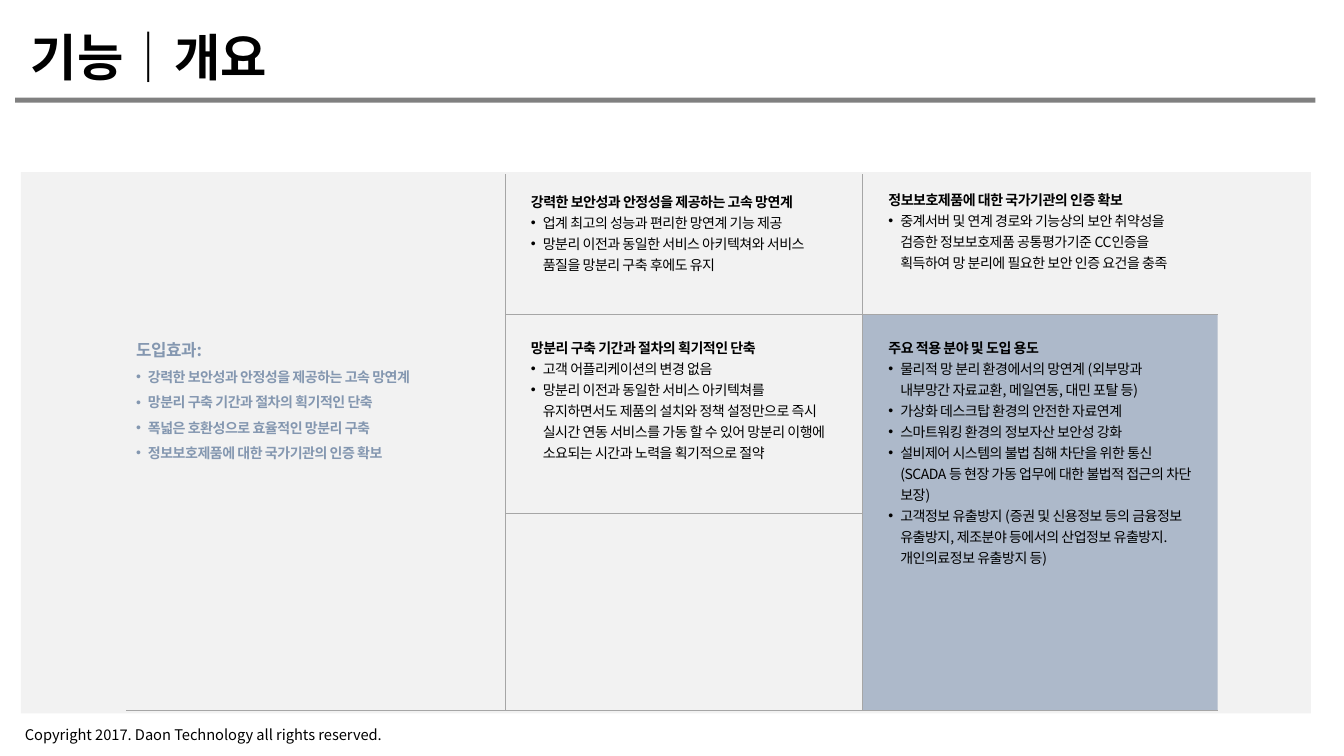
from dataclasses import dataclass

from lxml import etree
from pptx import Presentation
from pptx import util as u
from pptx.dml.color import RGBColor
from pptx.enum import shapes, text
from pptx.oxml.ns import qn

FONT = "Noto Sans CJK KR"
BLACK, SLATE, BLUE = "000000", "8497B0", "ADB9CA"
GREY, RULE, PANEL = "808080", "A6A6A6", "F2F2F2"

# Grid of the feature table, in centimetres
LEFT, MIDDLE, RIGHT, END = 3.18, 12.73, 21.74, 30.69
TOP, UPPER, LOWER, BOTTOM = 4.39, 7.92, 12.93, 17.91
CELL_PAD = 0.4
CELL_WIDTH = 8.2
BULLET_INDENT = 0.3


@dataclass
class Block:
    left: float
    top: float
    width: float
    height: float
    color: str


@dataclass
class Rule:
    x1: float
    y1: float
    x2: float
    y2: float


@dataclass
class Feature:
    left: float
    top: float
    width: float
    height: float
    heading: str
    bullets: list[str]
    heading_size: float = 10
    line_pitch: float = 15
    color: str = BLACK
    bold_bullets: bool = False


BLOCKS = [
    Block(0.38, 2.46, 32.77, 0.13, GREY),
    Block(0.53, 4.34, 32.51, 13.64, PANEL),
    Block(RIGHT, UPPER, END - RIGHT, BOTTOM - UPPER, BLUE),
]

RULES = [
    Rule(MIDDLE, TOP, MIDDLE, BOTTOM),
    Rule(RIGHT, TOP, RIGHT, BOTTOM),
    Rule(MIDDLE, UPPER, END, UPPER),
    Rule(MIDDLE, LOWER, RIGHT, LOWER),
    Rule(LEFT, BOTTOM, END, BOTTOM),
]

FEATURES = [
    Feature(LEFT, UPPER + CELL_PAD, 8.41, 5.38, "도입효과:", [
        "강력한 보안성과 안정성을 제공하는 고속 망연계",
        "망분리 구축 기간과 절차의 획기적인 단축",
        "폭넓은 호환성으로 효율적인 망분리 구축",
        "정보보호제품에 대한 국가기관의 인증 확보",
    ], heading_size=12, line_pitch=18, color=SLATE, bold_bullets=True),
    Feature(MIDDLE + CELL_PAD, 4.65, CELL_WIDTH, 2.39,
            "강력한 보안성과 안정성을 제공하는 고속 망연계", [
        "업계 최고의 성능과 편리한 망연계 기능 제공",
        "망분리 이전과 동일한 서비스 아키텍쳐와 서비스 품질을 망분리 구축 후에도 유지",
    ]),
    Feature(MIDDLE + CELL_PAD, UPPER + CELL_PAD, CELL_WIDTH, 3.99,
            "망분리 구축 기간과 절차의 획기적인 단축", [
        "고객 어플리케이션의 변경 없음",
        "망분리 이전과 동일한 서비스 아키텍쳐를 유지하면서도 제품의 설치와 정책 설정만으로 즉시 "
        "실시간 연동 서비스를 가동 할 수 있어 망분리 이행에 소요되는 시간과 노력을 획기적으로 절약",
    ]),
    Feature(RIGHT + CELL_PAD, 4.6, CELL_WIDTH, 2.92,
            "정보보호제품에 대한 국가기관의 인증 확보", [
        "중계서버 및 연계 경로와 기능상의 보안 취약성을 검증한 정보보호제품 공통평가기준 "
        "CC인증을 획득하여 망 분리에 필요한 보안 인증 요건을 충족",
    ]),
    Feature(RIGHT + CELL_PAD, UPPER + CELL_PAD, CELL_WIDTH, 6.15,
            "주요 적용 분야 및 도입 용도", [
        "물리적 망 분리 환경에서의 망연계 (외부망과 내부망간 자료교환, 메일연동, 대민 포탈 등)",
        "가상화 데스크탑 환경의 안전한 자료연계",
        "스마트워킹 환경의 정보자산 보안성 강화",
        "설비제어 시스템의 불법 침해 차단을 위한 통신 (SCADA 등 현장 가동 업무에 대한 불법적 접근의 차단 보장)",
        "고객정보 유출방지 (증권 및 신용정보 등의 금융정보 유출방지, 제조분야 등에서의 "
        "산업정보 유출방지. 개인의료정보 유출방지 등)",
    ]),
]


def rgb(color: str) -> RGBColor:
    return RGBColor.from_string(color)


def add_block(page, block: Block) -> None:
    shape = page.shapes.add_shape(
        shapes.MSO_SHAPE.RECTANGLE, u.Cm(block.left), u.Cm(block.top),
        u.Cm(block.width), u.Cm(block.height))
    shape.shadow.inherit = False
    shape.fill.solid()
    shape.fill.fore_color.rgb = rgb(block.color)
    shape.line.fill.background()


def add_rule(page, rule: Rule) -> None:
    line = page.shapes.add_connector(
        shapes.MSO_CONNECTOR.STRAIGHT, u.Cm(rule.x1), u.Cm(rule.y1),
        u.Cm(rule.x2), u.Cm(rule.y2))
    line.line.color.rgb = rgb(RULE)
    line.line.width = u.Pt(0.5)
    etree.SubElement(line._element.spPr, qn("a:effectLst"))


def add_box(page, left: float, top: float, width: float, height: float, anchor):
    box = page.shapes.add_textbox(u.Cm(left), u.Cm(top), u.Cm(width), u.Cm(height))
    frame = box.text_frame
    frame.word_wrap = True
    frame.vertical_anchor = anchor
    return frame


def add_span(para, words: str, color: str, spacing: float = 0, **formats) -> None:
    """Add a run; spacing is the letter spacing in points."""
    span = para.add_run()
    span.text = words
    for name, value in {"name": FONT, **formats}.items():
        setattr(span.font, name, value)
    span.font.color.rgb = rgb(color)
    properties = span._r.get_or_add_rPr()
    etree.SubElement(properties, qn("a:ea"), typeface=FONT)
    if spacing:
        properties.set("spc", str(round(spacing * 100)))


def set_bullet(para) -> None:
    properties = para._p.get_or_add_pPr()
    indent = u.Cm(BULLET_INDENT)
    properties.set("marL", str(indent))
    properties.set("indent", str(-indent))
    etree.SubElement(properties, qn("a:buFont"), typeface="Arial")
    etree.SubElement(properties, qn("a:buChar"), char="•")


def add_feature(page, feature: Feature) -> None:
    frame = add_box(page, feature.left, feature.top, feature.width,
                    feature.height, text.MSO_ANCHOR.TOP)
    heading = frame.paragraphs[0]
    add_span(heading, feature.heading, feature.color, -0.3,
             size=u.Pt(feature.heading_size), bold=True)
    for words in feature.bullets:
        para = frame.add_paragraph()
        set_bullet(para)
        add_span(para, words, feature.color, -0.3,
                 size=u.Pt(10), bold=feature.bold_bullets)
    for para in frame.paragraphs:
        para.line_spacing = u.Pt(feature.line_pitch)


def main() -> None:
    deck = Presentation()
    deck.slide_width, deck.slide_height = u.Cm(33.87), u.Cm(19.05)
    page = deck.slides.add_slide(deck.slide_layouts[6])

    for block in BLOCKS:
        add_block(page, block)
    for rule in RULES:
        add_rule(page, rule)

    title = add_box(page, 0.53, 0.51, 32.51, 1.8, text.MSO_ANCHOR.MIDDLE)
    add_span(title.paragraphs[0], "기능│개요", BLACK, size=u.Pt(36), bold=True)
    footer = add_box(page, 0.38, 18.14, 16.94, 0.74, text.MSO_ANCHOR.MIDDLE)
    add_span(footer.paragraphs[0],
             "Copyright 2017. Daon Technology all rights reserved.",
             BLACK, size=u.Pt(10.5))

    for feature in FEATURES:
        add_feature(page, feature)
    deck.save("out.pptx")


if __name__ == "__main__":
    main()
